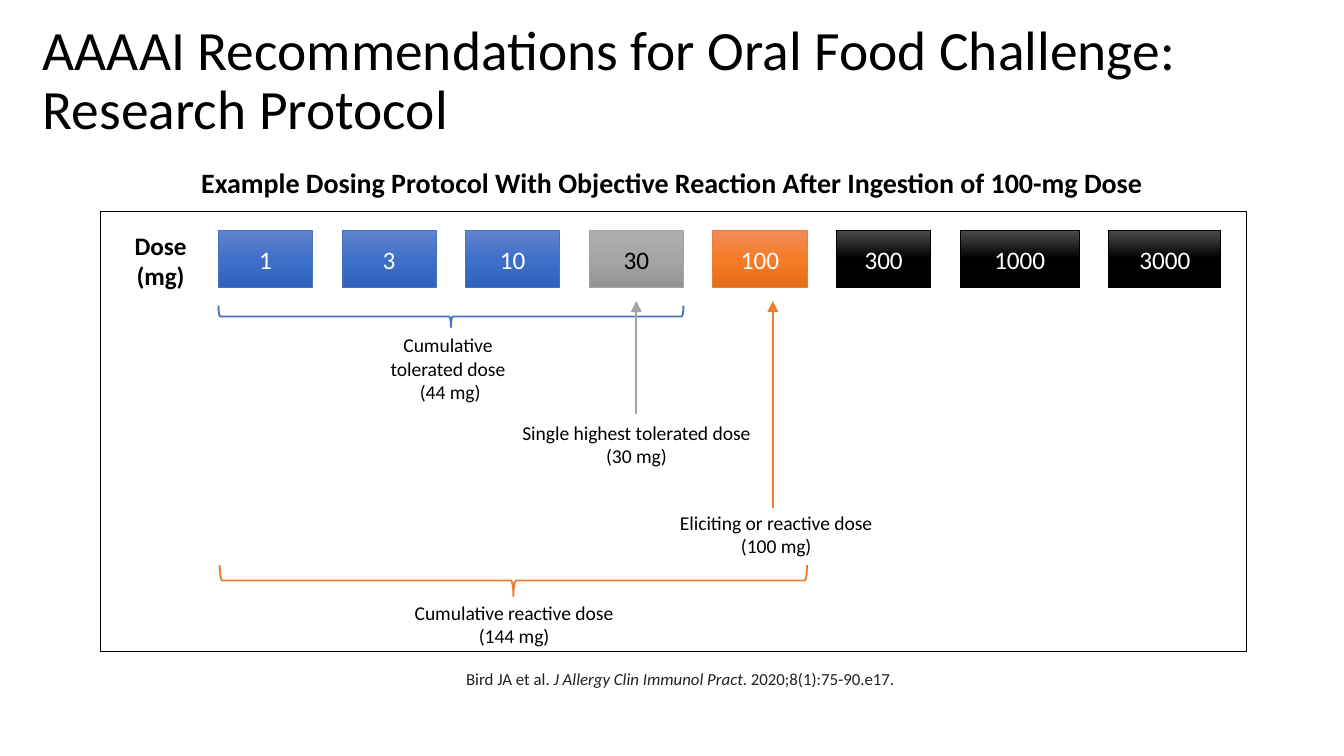
import copy

import pptx
import pptx.dml.color
import pptx.enum.shapes
import pptx.enum.text
import pptx.oxml
import pptx.oxml.ns
import pptx.util

SCALE = 4572  # EMU in one px, 200 px to the inch
FONT = "Calibri"
COLORS = {"black": "000000", "white": "FFFFFF", "note": "212121",
          "blue": "4472C4", "gray": "A5A5A5", "orange": "ED7D31"}
GRADS = {"blue": ("6183CB", "3E70CA", "3062BB"),
         "gray": ("AFAFAF", "A5A5A5", "939393"),
         "orange": ("F18C57", "F67B28", "E56C19"),
         "black": ("4B4B4B", "000000", "000000")}
# dose, width, fill, text colour
DOSES = [("1", 140, "blue", "white"), ("3", 140, "blue", "white"),
         ("10", 140, "blue", "white"), ("30", 140, "gray", "black"),
         ("100", 140, "orange", "white"), ("300", 140, "black", "white"),
         ("1000", 177, "black", "white"), ("3000", 167, "black", "white")]
LEFT, TOP, HIGH, GAP = 325, 343, 85, 44
LABELS = [((392, 486, 556, 126), ["Cumulative \ntolerated dose \n(44 mg)"]),
          ((755, 616, 384, 90), ["Single highest tolerated dose", "(30 mg)"]),
          ((883, 750, 544, 90), ["Eliciting or reactive dose", "(100 mg)"]),
          ((493, 884, 544, 90), ["Cumulative reactive dose", "(144 mg)"])]

SHAPE = pptx.enum.shapes.MSO_SHAPE
ALIGN = pptx.enum.text.PP_ALIGN
ANCHOR = pptx.enum.text.MSO_ANCHOR


def px(*nums):
    return [pptx.util.Emu(num * SCALE) for num in nums]


def rgb(name):
    return pptx.dml.color.RGBColor.from_string(COLORS.get(name, name))


def add_run(para, text, size, color="black", bold=False, italic=False):
    """Add text in one style; a newline becomes a line break."""
    for i, part in enumerate(text.split("\n")):
        if i:
            para.add_line_break()
        run = para.add_run()
        run.text = part
        font = run.font
        font.name, font.size = FONT, pptx.util.Pt(size)
        font.bold, font.italic = bold, italic
        font.color.rgb = rgb(color)


def set_frame(shape, anchor=ANCHOR.TOP, wrap=True):
    frame = shape.text_frame
    frame.word_wrap = wrap
    frame.vertical_anchor = anchor
    frame.margin_left, frame.margin_right = px(20, 20)
    frame.margin_top, frame.margin_bottom = px(10, 10)
    return frame


def add_text(slide, box, lines, size, align=ALIGN.CENTER, bold=False,
             anchor=ANCHOR.TOP, wrap=True, space=1.0):
    """Add a text box with one paragraph for each line."""
    frame = set_frame(slide.shapes.add_textbox(*px(*box)), anchor, wrap)
    for i, line in enumerate(lines):
        para = frame.add_paragraph() if i else frame.paragraphs[0]
        para.alignment, para.line_spacing = align, space
        add_run(para, line, size, bold=bold)


def add_note(slide):
    frame = set_frame(slide.shapes.add_textbox(*px(674, 988, 1326, 120)))
    para = frame.paragraphs[0]
    para.line_spacing = 0.9
    add_run(para, "Bird JA et al. ", 9, "note")
    add_run(para, "J Allergy Clin Immunol Pract", 9, "note", italic=True)
    add_run(para, ". 2020;8(1):75-90.e17.", 9, "note")


def add_form(slide, kind, box, color, width):
    """Add an unfilled preset shape with a plain outline."""
    form = slide.shapes.add_shape(kind, *px(*box))
    form.shadow.inherit = False
    form.fill.background()
    form.line.color.rgb = rgb(color)
    form.line.width = pptx.util.Pt(width)
    return form


def set_grad(form, tones):
    """Fill from top to bottom with three evenly spaced tones."""
    form.fill.gradient()
    form.fill.gradient_angle = 270
    stops = form._element.spPr.find(".//" + pptx.oxml.ns.qn("a:gsLst"))
    stops.append(copy.deepcopy(stops[0]))
    for i, (stop, tone) in enumerate(zip(form.fill.gradient_stops, tones)):
        stop.position = i / 2
        stop.color.rgb = rgb(tone)


def add_doses(slide):
    left = LEFT
    for dose, wide, fill, color in DOSES:
        form = add_form(slide, SHAPE.RECTANGLE, (left, TOP, wide, HIGH), fill, 0.5)
        set_grad(form, GRADS[fill])
        para = set_frame(form, ANCHOR.MIDDLE).paragraphs[0]
        para.alignment = ALIGN.CENTER
        add_run(para, dose, 13.5, color)
        left += wide + GAP


def add_brace(slide, box, color):
    add_form(slide, SHAPE.RIGHT_BRACE, box, color, 1).rotation = 90


def add_arrow(slide, left, start, end, color):
    line = slide.shapes.add_connector(
        pptx.enum.shapes.MSO_CONNECTOR.STRAIGHT, *px(left, start, left, end))
    line.line.color.rgb = rgb(color)
    line.line.width = pptx.util.Pt(1)
    qn, make = pptx.oxml.ns.qn, pptx.oxml.xmlchemy.OxmlElement
    head = make("a:tailEnd")
    head.set("type", "triangle")
    props = line._element.spPr
    props.find(qn("a:ln")).append(head)
    props.append(make("a:effectLst"))


def main():
    deck = pptx.Presentation()
    deck.slide_width, deck.slide_height = px(2000, 1125)
    slide = deck.slides.add_slide(deck.slide_layouts[6])
    add_text(slide, (44, 28, 1916, 188),
             ["AAAAI Recommendations for Oral Food Challenge: \n"
              "Research Protocol"],
             29.7, ALIGN.LEFT, anchor=ANCHOR.MIDDLE, space=0.9)
    add_note(slide)
    add_text(slide, (141, 237, 1718, 70),
             ["Example Dosing Protocol With Objective Reaction After "
              "Ingestion of 100-mg Dose"], 15, bold=True)
    add_doses(slide)
    add_text(slide, (180, 333, 118, 112), ["Dose", "(mg)"], 13.5,
             bold=True, wrap=False)
    add_brace(slide, (655, 125, 32, 692), "blue")
    add_text(slide, *LABELS[0], 10.5)
    add_arrow(slide, 947, 616, 448, "gray")
    add_text(slide, *LABELS[1], 10.5)
    add_arrow(slide, 1150, 756, 448, "orange")
    add_text(slide, *LABELS[2], 10.5)
    add_brace(slide, (741, 427, 46, 874), "orange")
    add_text(slide, *LABELS[3], 10.5)
    add_form(slide, SHAPE.RECTANGLE, (150, 314, 1705, 656), "black", 0.5)
    deck.save("out.pptx")


if __name__ == "__main__":
    main()
